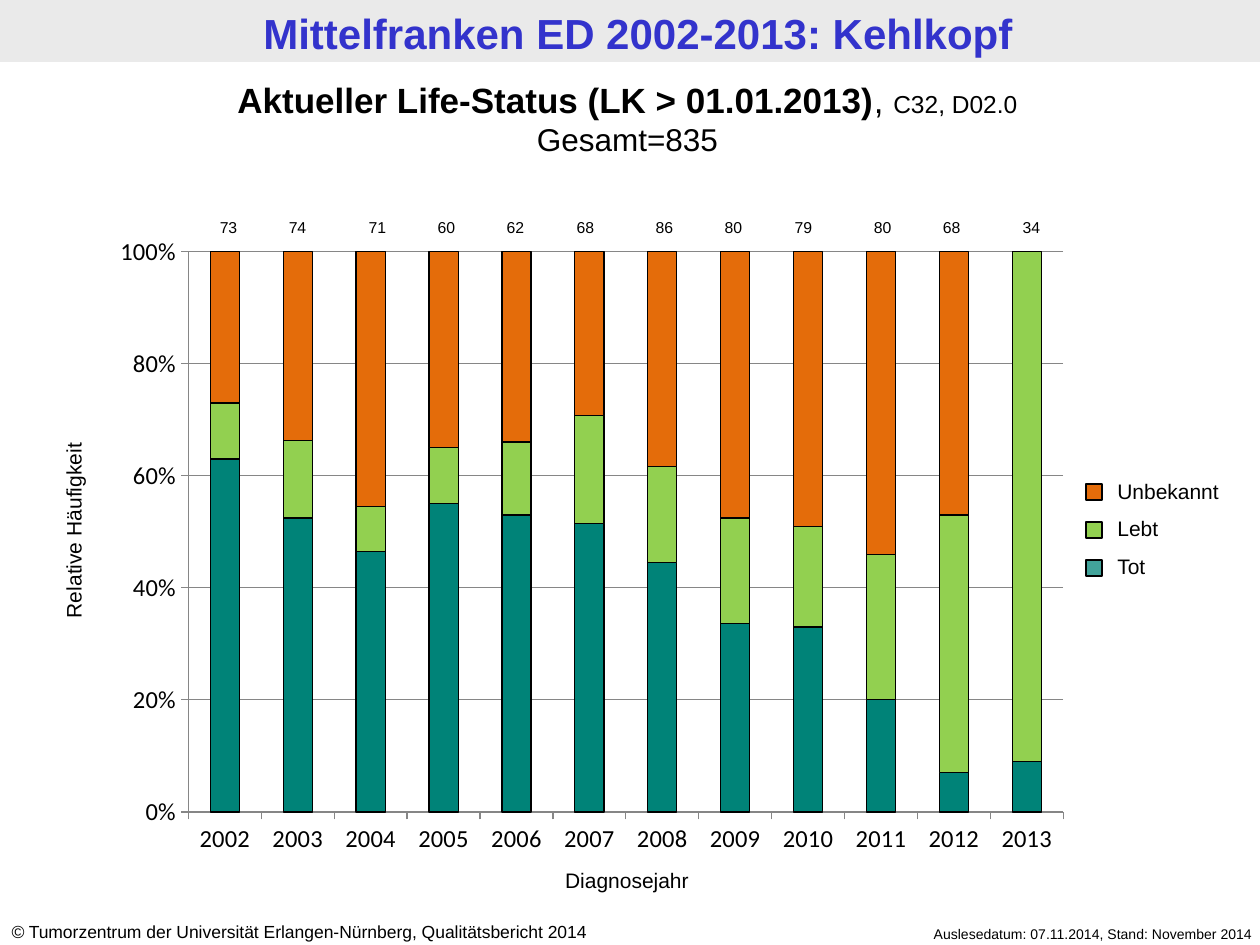
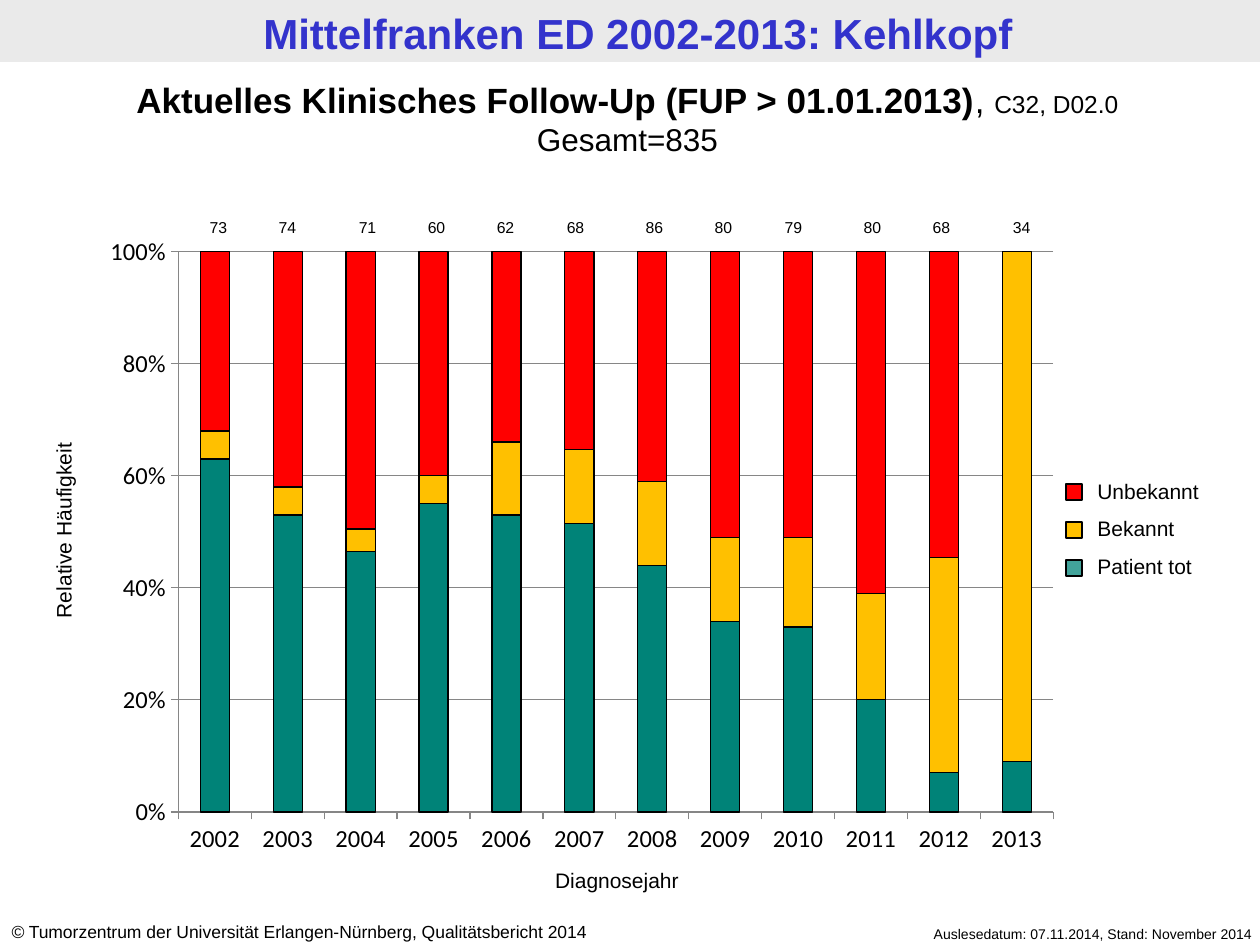
from lxml import etree
from pptx import Presentation
from pptx.chart.data import CategoryChartData
from pptx.dml.color import RGBColor
from pptx.enum.chart import XL_CHART_TYPE, XL_TICK_MARK
from pptx.enum.shapes import MSO_SHAPE
from pptx.enum.text import MSO_ANCHOR, MSO_AUTO_SIZE, PP_ALIGN
from pptx.oxml import parse_xml
from pptx.oxml.ns import nsdecls, qn
from pptx.util import Pt

STACKED_100 = XL_CHART_TYPE.COLUMN_STACKED_100
TICK_OUTSIDE = XL_TICK_MARK.OUTSIDE
RECTANGLE = MSO_SHAPE.RECTANGLE
TOP = MSO_ANCHOR.TOP
NO_AUTOFIT = MSO_AUTO_SIZE.NONE
LEFT, CENTER, RIGHT = PP_ALIGN.LEFT, PP_ALIGN.CENTER, PP_ALIGN.RIGHT

BLACK = RGBColor(0x00, 0x00, 0x00)
BAND_GRAY = RGBColor(0xEA, 0xEA, 0xEA)
AXIS_GRAY = RGBColor(0x86, 0x86, 0x86)
TITLE_BLUE = RGBColor(0x33, 0x33, 0xCC)
TEAL = RGBColor(0x00, 0x83, 0x78)
GREEN = RGBColor(0x92, 0xD0, 0x50)
ORANGE = RGBColor(0xE4, 0x6C, 0x0A)
YELLOW = RGBColor(0xFF, 0xC0, 0x00)
RED = RGBColor(0xFF, 0x00, 0x00)

TEXT_FONT = "Arial"
CHART_FONT = "Calibri"

REGION_TITLE = "Mittelfranken ED 2002-2013: Kehlkopf"
COPYRIGHT = " Tumorzentrum der Universität Erlangen-Nürnberg, Qualitätsbericht 2014"
DATA_STATUS = "Auslesedatum: 07.11.2014, Stand: November 2014"
DIAGNOSIS_CODES = "C32, D02.0"
TOTAL = "Gesamt=835"
YEARS = [str(year) for year in range(2002, 2014)]
CASES = (73, 74, 71, 60, 62, 68, 86, 80, 79, 80, 68, 34)
CASE_LEFTS = (194, 263, 343, 412, 481, 551, 630, 699, 769, 848, 917, 997)
DEAD_SHARES = (63, 53, 46, 55, 53, 51, 44, 34, 33, 20, 7, 9)

SLIDES = [
    {
        "heading": "Aktueller Life-Status (LK > 01.01.2013)",
        "shift": 0,
        "legend_left": 1086,
        "series": [
            ("Tot", TEAL, DEAD_SHARES),
            ("Lebt", GREEN, (10, 14, 8, 10, 13, 19, 17, 19, 18, 26, 46, 91)),
            ("Unbekannt", ORANGE, (27, 34, 45, 35, 34, 29, 38, 48, 49, 54, 47, 0)),
        ],
    },
    {
        "heading": "Aktuelles Klinisches Follow-Up (FUP > 01.01.2013)",
        "shift": -10,
        "legend_left": 1066,
        "series": [
            ("Patient tot", TEAL, DEAD_SHARES),
            ("Bekannt", YELLOW, (5, 5, 4, 5, 13, 13, 15, 15, 16, 19, 38, 91)),
            ("Unbekannt", RED, (32, 42, 49, 40, 34, 35, 41, 51, 51, 61, 54, 0)),
        ],
    },
]

SLIDE_WIDTH, SLIDE_HEIGHT = 1260, 945
CHART_LEFT, CHART_TOP, CHART_WIDTH, CHART_HEIGHT = 100, 226, 983, 644
PLOT_BOX = {"x": 0.09, "y": 0.04, "w": 0.89, "h": 0.87}
SWATCH_SIZE, SWATCH_STEP = 16, 38


def px(length):
    return round(length * 914400 / 126)


def place(shape, left, top, width, height):
    shape.left, shape.top = px(left), px(top)
    shape.width, shape.height = px(width), px(height)


def fill_text(shape, paragraphs, align=LEFT, color=BLACK, space_before=0):
    frame = shape.text_frame
    frame.word_wrap = True
    frame.auto_size = NO_AUTOFIT
    frame.vertical_anchor = TOP
    for index, runs in enumerate(paragraphs):
        paragraph = frame.add_paragraph() if index else frame.paragraphs[0]
        paragraph.alignment = align
        paragraph.space_before = Pt(space_before if index else 0)
        for text, size, bold, italic in runs:
            run = paragraph.add_run()
            run.text = text
            run.font.name = TEXT_FONT
            run.font.size = Pt(size)
            run.font.bold = bold
            run.font.italic = italic
            run.font.color.rgb = color


def plain(text, size):
    return [(text, size, False, False)]


def add_text(slide, box, paragraphs, **style):
    shape = slide.shapes.add_textbox(*map(px, box))
    fill_text(shape, paragraphs, **style)
    return shape


def add_rectangle(slide, box, color, outlined=False):
    shape = slide.shapes.add_shape(RECTANGLE, *map(px, box))
    shape.shadow.inherit = False
    shape.fill.solid()
    shape.fill.fore_color.rgb = color
    if outlined:
        shape.line.color.rgb = BLACK
        shape.line.width = Pt(0.75)
    else:
        shape.line.fill.background()
    return shape


def add_frame(slide, heading):
    place(slide.shapes.title, -5, 72, 1265, 93)
    fill_text(slide.shapes.title, [
        [(heading, 20, True, False), (", ", 20, False, False),
         (DIAGNOSIS_CODES, 14, False, False)],
        plain(TOTAL, 18),
    ], align=CENTER)
    add_rectangle(slide, (0, 0, SLIDE_WIDTH, 62), BAND_GRAY)
    add_text(slide, (8, 1, SLIDE_WIDTH, 62), [[(REGION_TITLE, 24, True, False)]],
             align=CENTER, color=TITLE_BLUE)
    add_text(slide, (838, 919, 427, 30), [plain(DATA_STATUS, 8)], align=RIGHT)
    add_text(slide, (-1, 915, 660, 34),
             [[("©", 10, False, True), (COPYRIGHT, 10, False, False)]])


def set_plot_box(chart):
    plot_area = chart.element.find(".//" + qn("c:plotArea"))
    for old_layout in plot_area.findall(qn("c:layout")):
        plot_area.remove(old_layout)
    layout = parse_xml(f"<c:layout {nsdecls('c')}><c:manualLayout/></c:layout>")
    settings = {"layoutTarget": "inner", "xMode": "edge", "yMode": "edge", **PLOT_BOX}
    for name, value in settings.items():
        etree.SubElement(layout[0], qn("c:" + name)).set("val", str(value))
    plot_area.insert(0, layout)


def add_status_chart(slide, left, series_list):
    data = CategoryChartData()
    data.categories = YEARS
    for name, _, shares in series_list:
        data.add_series(name, shares)
    box = (left, CHART_TOP, CHART_WIDTH, CHART_HEIGHT)
    chart = slide.shapes.add_chart(STACKED_100, *map(px, box), data).chart
    chart.has_legend = False
    chart.has_title = False
    chart.font.name = CHART_FONT
    chart.font.size = Pt(18)
    chart.font.color.rgb = BLACK
    set_plot_box(chart)

    plot = chart.plots[0]
    plot.gap_width = 150
    plot.overlap = 100
    plot.vary_by_categories = False
    for series, (_, color, _) in zip(plot.series, series_list):
        series.format.fill.solid()
        series.format.fill.fore_color.rgb = color
        series.format.line.color.rgb = BLACK
        series.format.line.width = Pt(0.75)

    value_axis = chart.value_axis
    value_axis.major_unit = 0.2
    value_axis.has_major_gridlines = True
    value_axis.major_gridlines.format.line.color.rgb = AXIS_GRAY
    value_axis.tick_labels.number_format = "0%"
    value_axis.tick_labels.number_format_is_linked = False
    for axis in (chart.category_axis, value_axis):
        axis.major_tick_mark = TICK_OUTSIDE
        axis.format.line.color.rgb = AXIS_GRAY
        axis.tick_labels.font.size = Pt(14)


def add_axis_titles(slide, shift):
    vertical = add_text(slide, (shift - 78, 511, 304, 39),
                        [plain("Relative Häufigkeit", 12)], align=CENTER)
    vertical.rotation = 270
    add_text(slide, (485 + shift, 861, 284, 39), [plain("Diagnosejahr", 12)], align=CENTER)


def add_case_counts(slide, shift):
    for left, count in zip(CASE_LEFTS, CASES):
        add_text(slide, (left + shift, 212, 69, 31), [plain(str(count), 9)], align=CENTER)


def add_legend(slide, left, series_list):
    entries = series_list[::-1]
    add_text(slide, (left + 19, 472, 160, 115),
             [plain(name, 12) for name, _, _ in entries], space_before=7)
    for index, (_, color, _) in enumerate(entries):
        box = (left, 484 + index * SWATCH_STEP, SWATCH_SIZE, SWATCH_SIZE)
        swatch = add_rectangle(slide, box, color, outlined=True)
        if color == TEAL:
            fill_color = swatch.fill._xPr.find(".//" + qn("a:srgbClr"))
            etree.SubElement(fill_color, qn("a:alpha")).set("val", "74000")


def main():
    presentation = Presentation()
    presentation.slide_width = px(SLIDE_WIDTH)
    presentation.slide_height = px(SLIDE_HEIGHT)
    title_only = presentation.slide_layouts[5]
    for content in SLIDES:
        slide = presentation.slides.add_slide(title_only)
        shift, series_list = content["shift"], content["series"]
        add_frame(slide, content["heading"])
        add_status_chart(slide, CHART_LEFT + shift, series_list)
        add_axis_titles(slide, shift)
        add_case_counts(slide, shift)
        add_legend(slide, content["legend_left"], series_list)
    presentation.save("out.pptx")


if __name__ == "__main__":
    main()
